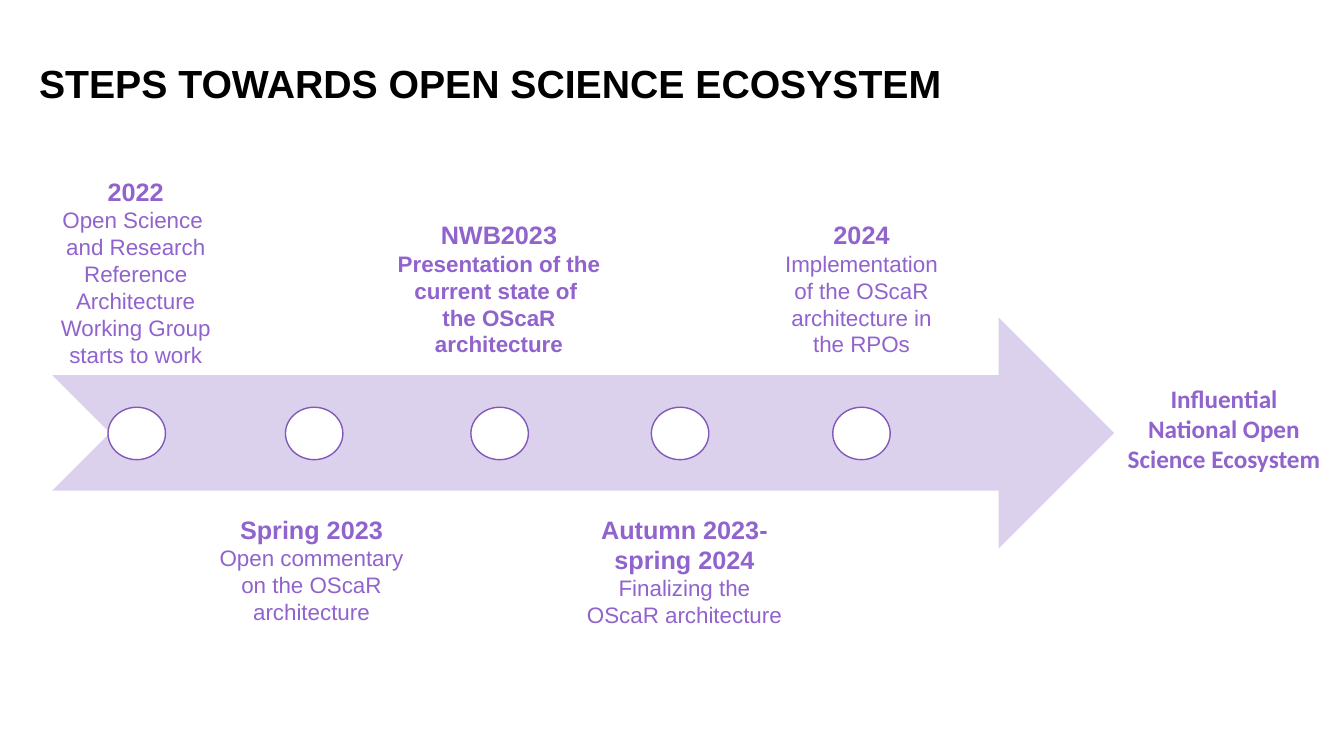
from lxml import etree
from pptx import Presentation
from pptx import util as u
from pptx.dml.color import RGBColor
from pptx.enum import shapes, text
from pptx.oxml.ns import qn

BLACK = RGBColor(0x00, 0x00, 0x00)
WHITE = RGBColor(0xFF, 0xFF, 0xFF)
PURPLE = RGBColor(0x90, 0x63, 0xCD)
OUTLINE = RGBColor(0x82, 0x59, 0xB9)
LAVENDER = RGBColor(0xDB, 0xD1, 0xED)

presentation = Presentation()
presentation.slide_width = u.Inches(13.33)
presentation.slide_height = u.Inches(7.5)
slide = presentation.slides.add_slide(presentation.slide_layouts[6])

# Grid of 40 columns by 30 rows
COLUMN = presentation.slide_width / 40
ROW = presentation.slide_height / 30


def place(left, top, width, height):
    return [u.Emu(round(length)) for length in
            (left * COLUMN, top * ROW, width * COLUMN, height * ROW)]


def add_text(box, paragraphs, font="Arial", color=PURPLE,
             align=text.PP_ALIGN.CENTER, anchor=text.MSO_ANCHOR.TOP, spacing=None):
    """Write (words, size, bold) paragraphs into a new text box."""
    frame = slide.shapes.add_textbox(*place(*box)).text_frame
    frame.word_wrap = True
    frame.vertical_anchor = anchor
    for index, (words, size, bold) in enumerate(paragraphs):
        paragraph = frame.add_paragraph() if index else frame.paragraphs[0]
        paragraph.text = words
        paragraph.alignment = align
        paragraph.line_spacing = spacing
        for run in paragraph.runs:
            run.font.name = font
            run.font.size = u.Pt(size)
            run.font.bold = bold
            run.font.color.rgb = color
        # Line breaks take the size of the words around them
        for line_break in paragraph._p.findall(qn("a:br")):
            etree.SubElement(line_break, qn("a:rPr"), sz=str(size * 100))


# Title
add_text((0.87, 1.76, 33.28, 2.68), [("STEPS TOWARDS OPEN SCIENCE ECOSYSTEM", 28, True)],
         color=BLACK, align=text.PP_ALIGN.LEFT, anchor=text.MSO_ANCHOR.BOTTOM, spacing=0.9)

# Timeline arrow
arrow = slide.shapes.add_shape(shapes.MSO_SHAPE.NOTCHED_RIGHT_ARROW,
                               *place(1.56, 12.6, 31.6, 9.16))
arrow.shadow.inherit = False
arrow.fill.solid()
arrow.fill.fore_color.rgb = LAVENDER
arrow.line.fill.background()

# Milestones: dot centre, label centre, top, width, height, heading, detail, bold detail
milestones = [
    (4.07, 4.04, 6.8, 6.33, 9.44, "2022",
     "Open Science \nand Research Reference Architecture Working Group starts to work", False),
    (9.35, 9.27, 20.2, 6.78, 6.04, "Spring 2023",
     "Open commentary on the OScaR architecture", False),
    (14.87, 14.85, 8.52, 6.78, 5.92, "NWB2023",
     "Presentation of the current state of \nthe OScaR architecture", True),
    (20.24, 20.37, 20.2, 6.78, 5, "Autumn 2023-spring 2024",
     "Finalizing the OScaR architecture", False),
    (25.64, 25.64, 8.52, 5.31, 5.92, "2024",
     "Implementation of the OScaR architecture in the RPOs", False),
]
DOT_WIDTH, DOT_HEIGHT, DOT_TOP = 1.71, 2.08, 16.16
for dot_center, label_center, top, width, height, heading, detail, bold in milestones:
    dot = slide.shapes.add_shape(
        shapes.MSO_SHAPE.OVAL,
        *place(dot_center - DOT_WIDTH / 2, DOT_TOP, DOT_WIDTH, DOT_HEIGHT))
    dot.shadow.inherit = False
    dot.fill.solid()
    dot.fill.fore_color.rgb = WHITE
    dot.line.color.rgb = OUTLINE
    dot.line.width = u.Pt(1)
    add_text((label_center - width / 2, top, width, height),
             [(heading, 18, True), (detail, 16, bold)])

# Goal at the arrow tip
add_text((33.16, 15, 6.54, 4.04),
         [("Influential National Open Science Ecosystem", 18, True)], font="Calibri")

presentation.save("out.pptx")
